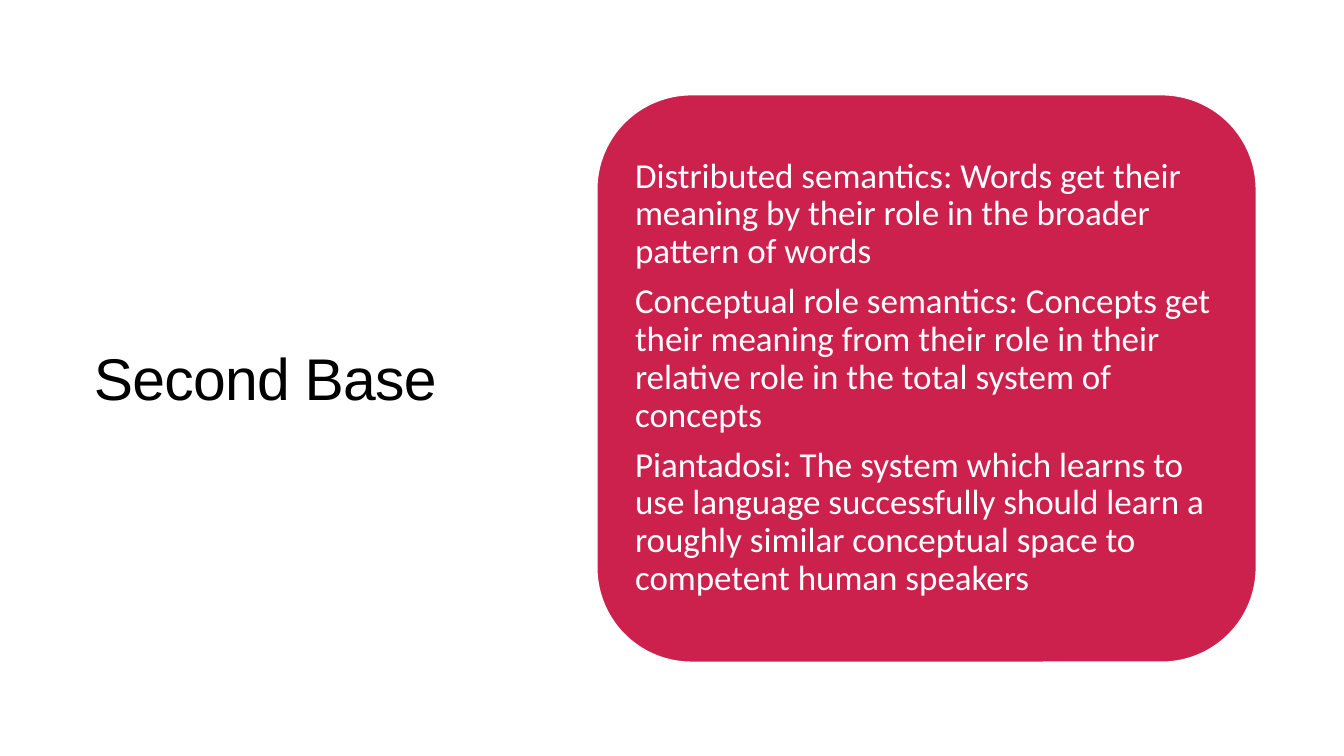
import pptx
import pptx.dml.color
import pptx.enum.shapes
import pptx.enum.text
import pptx.util
from pptx.util import Inches

BLACK = "000000"
WHITE = "FFFFFF"
CRIMSON = "CC204D"

IDEAS = [
    "Distributed semantics: Words get their meaning by their role in the broader pattern of words",
    "Conceptual role semantics: Concepts get their meaning from their role in their relative role "
    "in the total system of concepts",
    "Piantadosi: The system which learns to use language successfully should learn a roughly "
    "similar conceptual space to competent human speakers",
]


def color(hex_code):
    return pptx.dml.color.RGBColor.from_string(hex_code)


class SlideBuilder:
    """Holds the fonts and the slide being built."""

    title_font = "Arial"
    body_font = "Calibri"

    def __init__(self, slide):
        self.slide = slide

    def format_paragraph(self, paragraph, font, size, hex_code, line_spacing):
        paragraph.alignment = pptx.enum.text.PP_ALIGN.LEFT
        paragraph.line_spacing = line_spacing
        paragraph.font.name = font
        paragraph.font.size = pptx.util.Pt(size)
        paragraph.font.color.rgb = color(hex_code)

    def prepare_frame(self, frame):
        frame.word_wrap = True
        frame.auto_size = pptx.enum.text.MSO_AUTO_SIZE.NONE
        frame.vertical_anchor = pptx.enum.text.MSO_ANCHOR.MIDDLE

    def title(self, text, left, top, width, height):
        heading = self.slide.shapes.title
        heading.left, heading.top = Inches(left), Inches(top)
        heading.width, heading.height = Inches(width), Inches(height)
        self.prepare_frame(heading.text_frame)
        heading.text_frame.text = text
        paragraph = heading.text_frame.paragraphs[0]
        self.format_paragraph(paragraph, self.title_font, 42, BLACK, 0.95)
        # Letter spacing is in hundredths of a point.
        paragraph.runs[0].font._element.set("spc", "-50")

    def card(self, left, top, width, height):
        panel = self.slide.shapes.add_shape(
            pptx.enum.shapes.MSO_SHAPE.ROUNDED_RECTANGLE,
            Inches(left), Inches(top), Inches(width), Inches(height))
        panel.shadow.inherit = False
        panel.fill.solid()
        panel.fill.fore_color.rgb = color(CRIMSON)
        panel.line.color.rgb = color(WHITE)
        panel.line.width = pptx.util.Pt(1)

    def body(self, texts, left, top, width, height):
        frame = self.slide.shapes.add_textbox(
            Inches(left), Inches(top), Inches(width), Inches(height)).text_frame
        self.prepare_frame(frame)
        frame.margin_left = frame.margin_right = Inches(0.1)
        frame.margin_top = frame.margin_bottom = Inches(0.1)
        frame.text = "\n".join(texts)
        for paragraph in frame.paragraphs:
            self.format_paragraph(paragraph, self.body_font, 25, WHITE, 0.9)
            paragraph.space_after = pptx.util.Pt(8.75)


def main():
    deck = pptx.Presentation()
    deck.slide_width, deck.slide_height = Inches(13.33), Inches(7.5)
    title_only = deck.slide_layouts[5]
    builder = SlideBuilder(deck.slides.add_slide(title_only))
    builder.title("Second Base", 0.83, 0.85, 4.27, 5.84)
    builder.card(5.92, 0.94, 6.54, 5.63)
    builder.body(IDEAS, 6.2, 1.21, 5.99, 5.08)
    deck.save("out.pptx")


if __name__ == "__main__":
    main()
